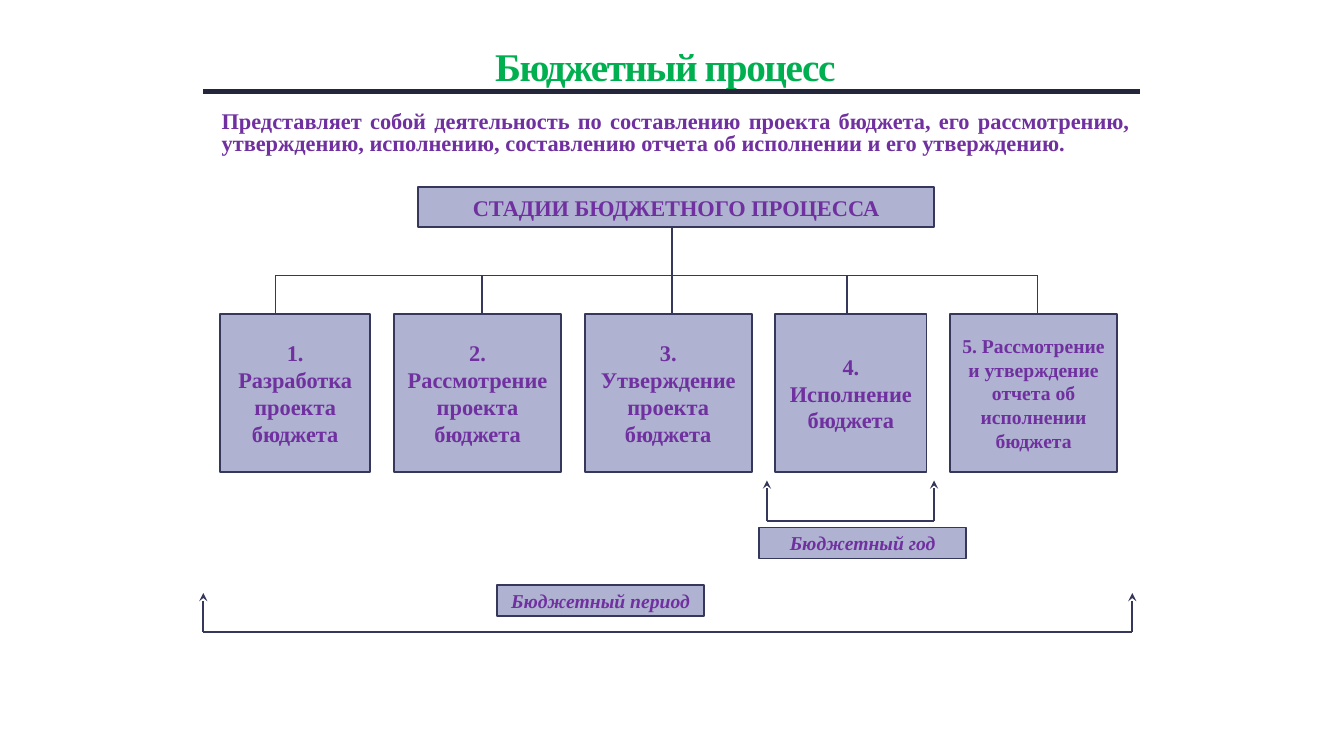
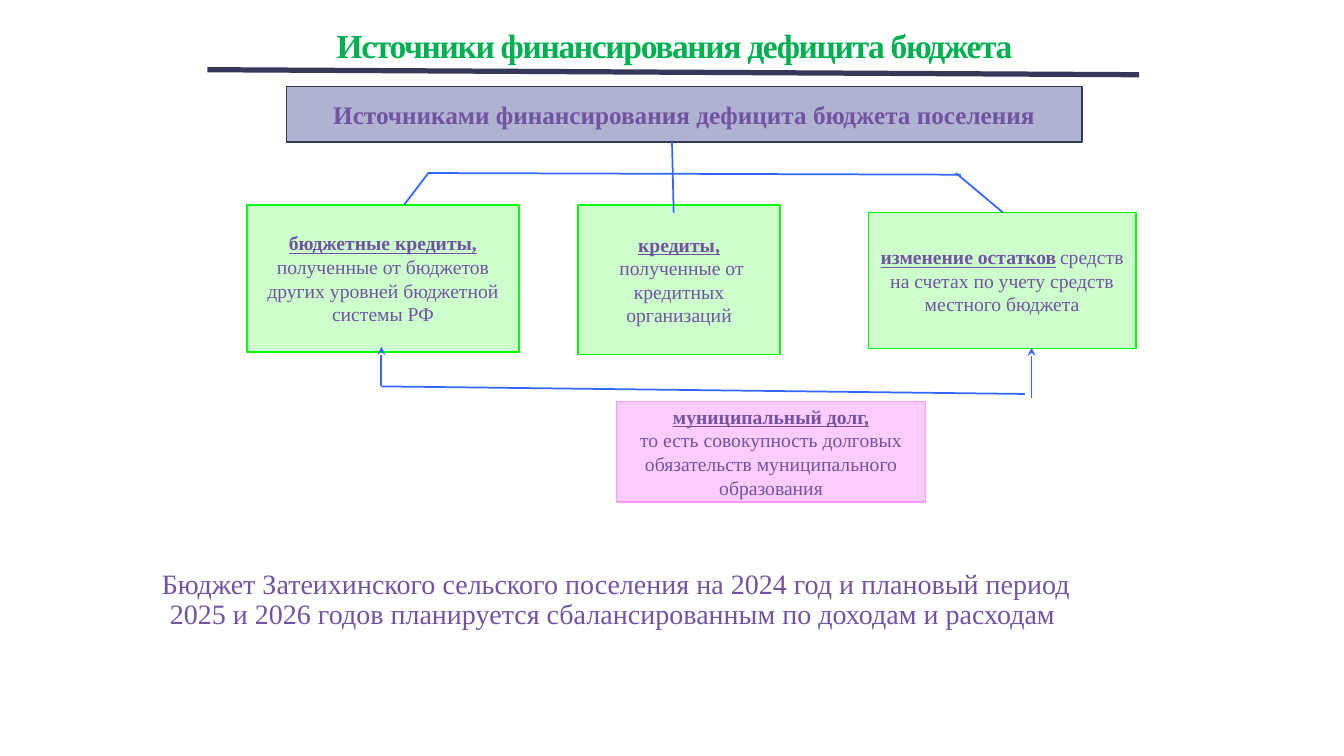
from lxml.etree import SubElement
from pptx import Presentation
from pptx.dml.color import RGBColor
from pptx.enum.shapes import MSO_CONNECTOR, MSO_SHAPE
from pptx.enum.text import MSO_ANCHOR, PP_ALIGN
from pptx.oxml.ns import qn
from pptx.util import Inches, Pt

RECT = MSO_SHAPE.RECTANGLE
LINE = MSO_CONNECTOR.STRAIGHT
TOP, MID, LOW = MSO_ANCHOR.TOP, MSO_ANCHOR.MIDDLE, MSO_ANCHOR.BOTTOM
MIDST, JUST = PP_ALIGN.CENTER, PP_ALIGN.JUSTIFY
COLS, ROWS = 160, 90
FONT = "Times New Roman"
HUES = {
    "title": "00B050", "deep": "7030A0", "soft": "7153A1",
    "panel": "AFB2D0", "edge": "35385A", "dark": "24263C",
    "mint": "CCFFCC", "lime": "00FF00", "blue": "3366FF",
    "rose": "FFCCFF", "pink": "FF99FF",
}
LEAD = {"bold": True, "underline": True}


def tint(name):
    return RGBColor.from_string(HUES[name])


class Deck:
    """Holds the shared style and the slide being drawn."""

    def __init__(self):
        self.show = Presentation()
        self.show.slide_width = Inches(13.33)
        self.show.slide_height = Inches(7.5)
        self.page = None

    def start(self, title, spot, size, rule, hue):
        self.page = self.show.slides.add_slide(self.show.slide_layouts[6])
        self.text(title, spot, size, "title", anchor=LOW, space=-100, bold=True)
        self.line(*rule, hue=hue, width=3.75)

    def x(self, col):
        return round(self.show.slide_width * col / COLS)

    def y(self, row):
        return round(self.show.slide_height * row / ROWS)

    def place(self, spot):
        left, top, wide, high = spot
        return self.x(left), self.y(top), self.x(wide), self.y(high)

    def fill_text(self, frame, text, size, hue, anchor=MID, align=MIDST,
                  pitch=None, space=None, **look):
        frame.word_wrap = True
        frame.vertical_anchor = anchor
        paras = [[(text, {})]] if isinstance(text, str) else text
        for at, runs in enumerate(paras):
            para = frame.add_paragraph() if at else frame.paragraphs[0]
            para.alignment = align
            para.line_spacing = pitch
            for words, extra in runs:
                run = para.add_run()
                run.text = words
                font = run.font
                style = {"size": Pt(size), **look, **extra}
                font.name = FONT
                font.color.rgb = tint(hue)
                font.size = style["size"]
                font.bold = style.get("bold", False)
                font.italic = style.get("italic", False)
                font.underline = style.get("underline", False)
                if space:
                    font._element.set("spc", str(space))

    def text(self, text, spot, size, hue, **look):
        box = self.page.shapes.add_textbox(*self.place(spot))
        self.fill_text(box.text_frame, text, size, hue, **look)

    def box(self, text, spot, size, hue, fill="panel", edge="edge", **look):
        box = self.page.shapes.add_shape(RECT, *self.place(spot))
        box.shadow.inherit = False
        box.fill.solid()
        box.fill.fore_color.rgb = tint(fill)
        box.line.color.rgb = tint(edge)
        box.line.width = Pt(1.25)
        self.fill_text(box.text_frame, text, size, hue, **look)

    def line(self, x1, y1, x2, y2, hue="edge", width=1.25, arrow=False):
        link = self.page.shapes.add_connector(
            LINE, self.x(x1), self.y(y1), self.x(x2), self.y(y2))
        link.line.color.rgb = tint(hue)
        link.line.width = Pt(width)
        frame = link._element.spPr
        if arrow:
            SubElement(frame.find(qn("a:ln")), qn("a:tailEnd"), type="stealth")
        SubElement(frame, qn("a:effectLst"))

    def span(self, left, right, base, tip):
        self.line(left, base, right, base)
        for col in (left, right):
            self.line(col, base, col, tip, arrow=True)


def stages(deck):
    deck.start("Бюджетный процесс", (25.2, 4.7, 108, 6.5), 28,
               (24.2, 10.9, 135.7, 10.9), "dark")
    deck.text("Представляет собой деятельность по составлению проекта бюджета, "
              "его рассмотрению, утверждению, исполнению, составлению отчета "
              "об исполнении и его утверждению.",
              (25.2, 12.8, 110.5, 8.6), 16, "deep",
              anchor=TOP, align=JUST, pitch=0.8, bold=True)
    deck.box("СТАДИИ БЮДЖЕТНОГО ПРОЦЕССА", (49.8, 22.3, 61.4, 4.7), 16, "deep",
             bold=True)

    bus, top, gap, left = 32.8, 37.4, 2.8, 26.2
    steps = (
        ("1. Разработка проекта бюджета", 17.9, 16, 32.8),
        ("2. Рассмотрение проекта бюджета", 19.9, 16, 57.4),
        ("3. Утверждение проекта бюджета", 19.9, 16, 80),
        ("4. Исполнение бюджета", 18, 16, 100.8),
        ("5. Рассмотрение и утверждение отчета об исполнении бюджета",
         19.9, 14, 123.5),
    )
    deck.line(80, 27, 80, bus)
    deck.line(steps[0][3], bus, steps[-1][3], bus)
    for text, wide, size, col in steps:
        deck.box(text, (left, top, wide, 18.8), size, "deep", bold=True)
        deck.line(col, bus, col, top)
        left += wide + gap

    deck.span(91.3, 111.2, 62, 57.2)
    deck.span(24.2, 134.8, 75.2, 70.6)
    for text, col, row in (("Бюджетный год", 90.4, 62.8),
                           ("Бюджетный период", 59.2, 69.6)):
        deck.box(text, (col, row, 24.6, 3.7), 14, "deep", bold=True, italic=True)


def sources(deck):
    deck.start("Источники финансирования дефицита бюджета",
               (26.3, 1.9, 108, 6.5), 24, (24.7, 8.3, 135.6, 8.9), "edge")
    deck.text("Бюджет Затеихинского сельского поселения на 2024 год и плановый "
              "период 2025 и 2026 годов планируется сбалансированным по доходам "
              "и расходам ", (16.1, 67.3, 114.5, 14.2), 20, "soft",
              anchor=TOP, pitch=0.9)
    deck.box("Источниками финансирования дефицита бюджета поселения",
             (34.1, 10.3, 94.7, 6.6), 18, "soft", bold=True)

    green, rosy = ("mint", "lime"), ("rose", "pink")
    cards = (
        ((29.4, 24.4, 32.4, 17.5), green, [[
            ("бюджетные кредиты,", LEAD),
            (" полученные от бюджетов других уровней бюджетной системы РФ", {})]]),
        ((68.8, 24.4, 24.1, 17.8), green, [
            [("кредиты,", LEAD)],
            [(" полученные от кредитных организаций", {})]]),
        ((103.4, 25.3, 31.8, 16.2), green, [[
            ("изменение остатков", LEAD), (" ", {"size": Pt(10)}),
            ("средств на счетах по учету средств местного бюджета", {})]]),
        ((73.4, 47.8, 36.8, 12), rosy, [
            [("муниципальный долг,", LEAD)],
            [("то есть совокупность долговых обязательств муниципального "
              "образования", {})]]),
    )
    for spot, (fill, edge), text in cards:
        deck.box(text, spot, 14, "soft", fill, edge)

    links = (
        (80, 16.9, 80.2, 25.3), (51, 20.6, 48.1, 24.4),
        (113.8, 20.6, 119.4, 25.3), (50.9, 20.6, 114.4, 20.8),
        (45.4, 46, 122, 46.9),
    )
    for ends in links:
        deck.line(*ends, hue="blue")
    for col, base, tip in ((122.8, 47.4, 41.4), (45.4, 46, 41.3)):
        deck.line(col, base, col, tip, hue="blue", arrow=True)


def main():
    deck = Deck()
    stages(deck)
    sources(deck)
    deck.show.save("out.pptx")


if __name__ == "__main__":
    main()
